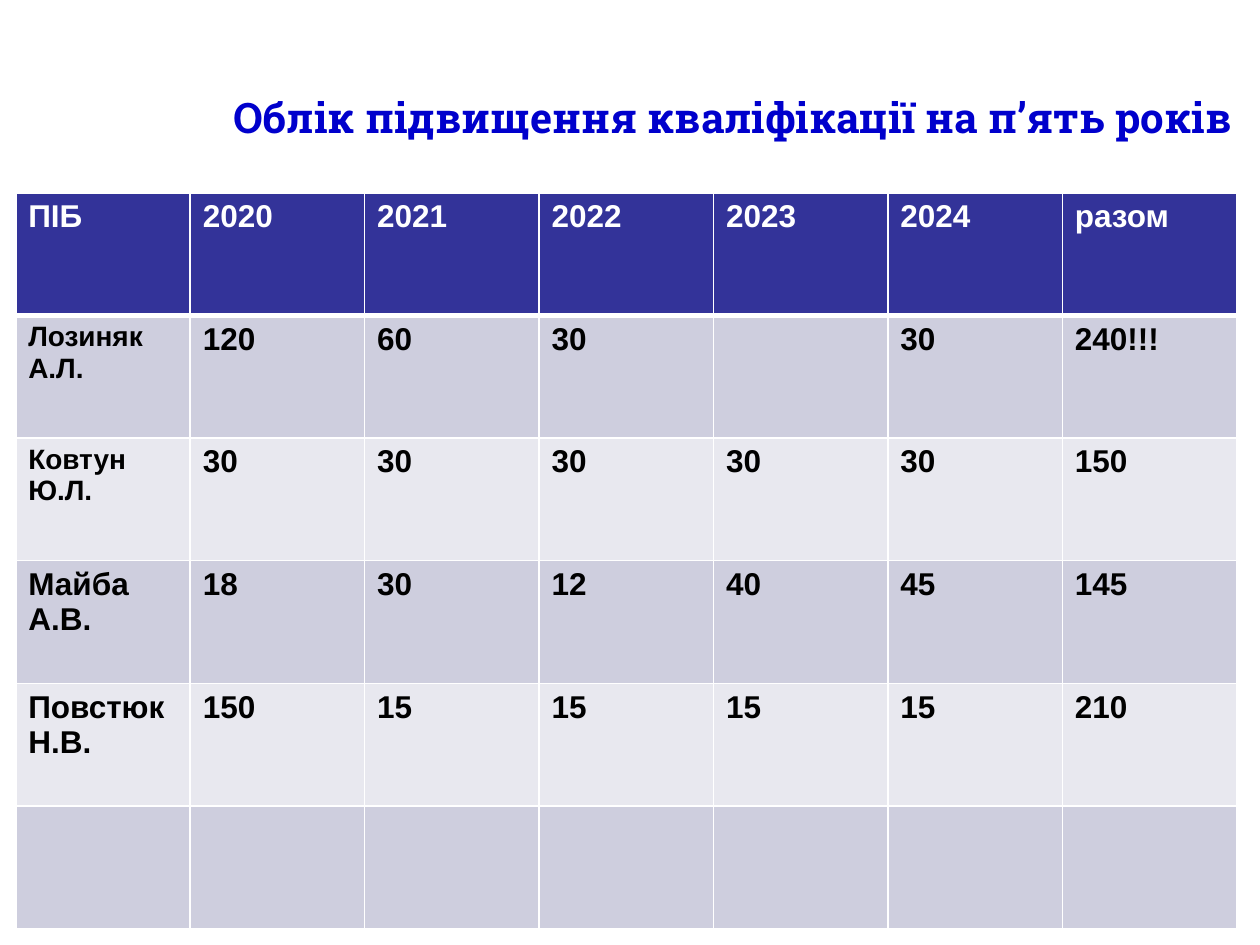
import pptx
import pptx.dml.color
import pptx.enum.text
import pptx.oxml.ns
import pptx.util
from lxml import etree

Pt = pptx.util.Pt

TITLE = "Облік підвищення кваліфікації на п’ять років"
HEADER = ("ПІБ", "2020", "2021", "2022", "2023", "2024", "разом")
# Each record: point size of the name, then the cells of the row
RECORDS = [
    (16, ("Лозиняк А.Л.", "120", "60", "30", "", "30", "240!!!")),
    (16, ("Ковтун Ю.Л.", "30", "30", "30", "30", "30", "150")),
    (18, ("Майба А.В.", "18", "30", "12", "40", "45", "145")),
    (18, ("Повстюк Н.В.", "150", "15", "15", "15", "15", "210")),
    (18, ("",) * len(HEADER)),
]
TEXT_SIZE = 18
HEADER_FILL = "333399"
BAND_FILLS = ("CECEDE", "E8E8EF")
BORDER = "FFFFFF"
TITLE_BOX = (9, 21.6, 702, 90)
TABLE_BOX = (9, 110.2, 697.7, 420.5)


def rgb(color):
    return pptx.dml.color.RGBColor.from_string(color)


def format_font(font, color, **values):
    font.color.rgb = rgb(color)
    for key, value in values.items():
        setattr(font, key, value)


def draw_borders(cell, widths):
    properties = cell._tc.get_or_add_tcPr()
    for side, width in widths.items():
        line = etree.SubElement(properties, pptx.oxml.ns.qn(f"a:ln{side}"), w=str(Pt(width)))
        fill = etree.SubElement(line, pptx.oxml.ns.qn("a:solidFill"))
        etree.SubElement(fill, pptx.oxml.ns.qn("a:srgbClr"), val=BORDER)


def add_title(slide):
    frame = slide.shapes.add_textbox(*map(Pt, TITLE_BOX)).text_frame
    frame.word_wrap = True
    frame.vertical_anchor = pptx.enum.text.MSO_ANCHOR.MIDDLE
    paragraph = frame.paragraphs[0]
    paragraph.alignment = pptx.enum.text.PP_ALIGN.RIGHT
    run = paragraph.add_run()
    run.text = TITLE
    format_font(run.font, "0000CC", name="Roboto Slab", size=Pt(24), bold=True)


def add_records(slide):
    rows = [(TEXT_SIZE, HEADER)] + RECORDS
    table = slide.shapes.add_table(len(rows), len(HEADER), *map(Pt, TABLE_BOX)).table
    for column in table.columns:
        column.width = Pt(TABLE_BOX[2] / len(HEADER))
    for r, (name_size, texts) in enumerate(rows):
        table.rows[r].height = Pt(TABLE_BOX[3] / len(rows))
        is_header = r == 0
        fill = HEADER_FILL if is_header else BAND_FILLS[(r - 1) % 2]
        widths = {"L": 1, "R": 1, "T": 3 if r == 1 else 1, "B": 3 if is_header else 1}
        for c, text in enumerate(texts):
            cell = table.cell(r, c)
            draw_borders(cell, widths)
            cell.fill.solid()
            cell.fill.fore_color.rgb = rgb(fill)
            if text:
                run = cell.text_frame.paragraphs[0].add_run()
                run.text = text
                format_font(run.font, "FFFFFF" if is_header else "000000", name="Arial",
                            size=Pt(name_size if c == 0 else TEXT_SIZE), bold=True)


def main():
    deck = pptx.Presentation()
    deck.slide_width, deck.slide_height = Pt(720), Pt(540)
    slide = deck.slides.add_slide(deck.slide_layouts[6])
    add_title(slide)
    add_records(slide)
    deck.save("out.pptx")


if __name__ == "__main__":
    main()
